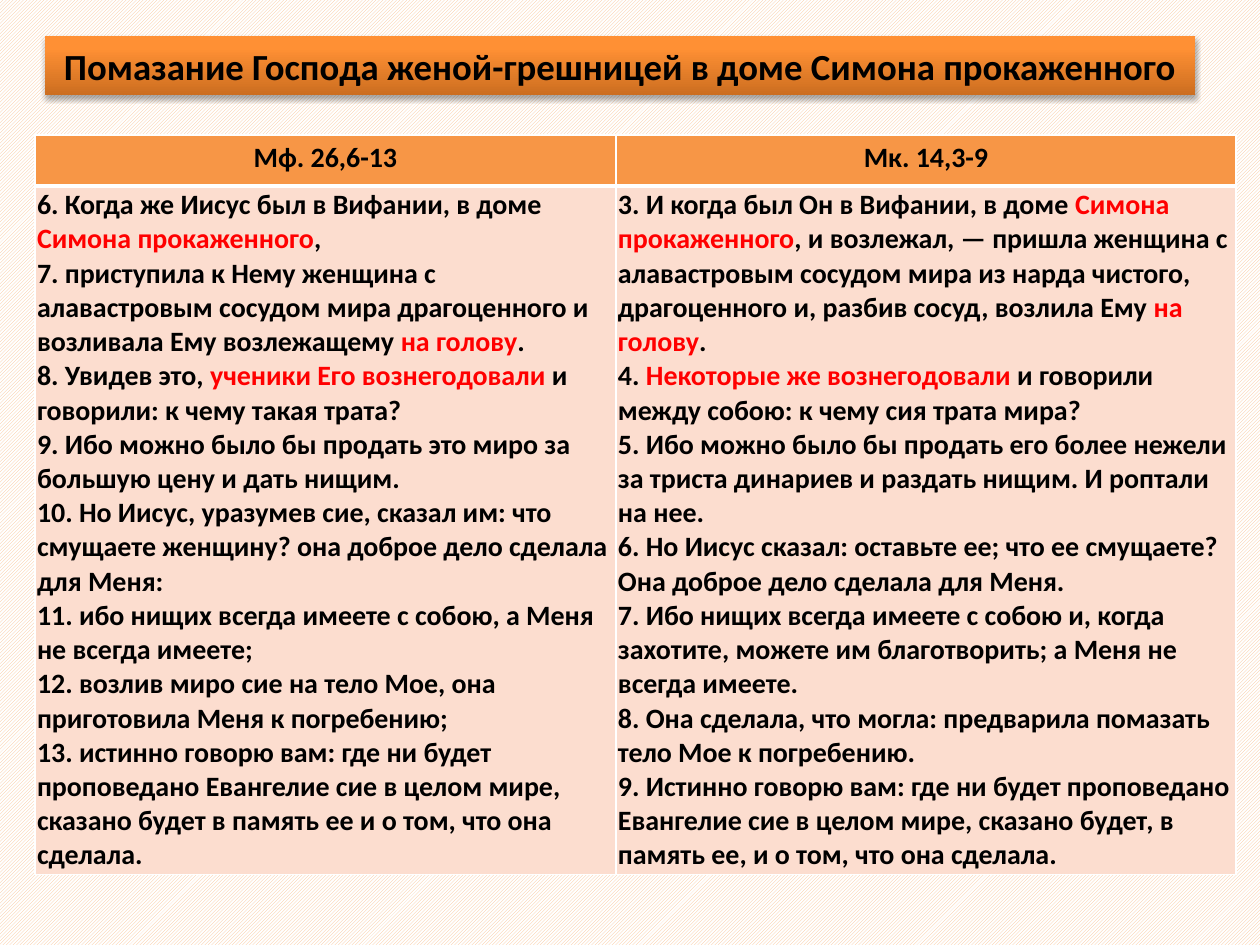
from pptx import Presentation, util as u
from pptx.dml.color import RGBColor
from pptx.enum import dml, text
from pptx.oxml import parse_xml
from pptx.oxml.ns import nsdecls

EMU_PER_PX = 914400 / 126
BLACK, WHITE, RED = "000000", "FFFFFF", "FF0000"
ORANGE, PEACH = "F79646", "FCDDCF"

# Words between asterisks are highlighted in red
HEADERS = ["Мф. 26,6-13", "Мк. 14,3-9"]
MATTHEW = [
    "6. Когда же Иисус был в Вифании, в доме *Симона прокаженного*,",
    "7. приступила к Нему женщина с алавастровым сосудом мира драгоценного и "
    "возливала Ему возлежащему *на голову*.",
    "8. Увидев это, *ученики Его вознегодовали *и говорили: к чему такая трата?",
    "9. Ибо можно было бы продать это миро за большую цену и дать нищим.",
    "10. Но Иисус, уразумев сие, сказал им: что смущаете женщину? "
    "она доброе дело сделала для Меня:",
    "11. ибо нищих всегда имеете с собою, а Меня не всегда имеете;",
    "12. возлив миро сие на тело Мое, она приготовила Меня к погребению;",
    "13. истинно говорю вам: где ни будет проповедано Евангелие сие в целом мире, "
    "сказано будет в память ее и о том, что она сделала.",
]
MARK = [
    "3. И когда был Он в Вифании, в доме *Симона прокаженного*, и возлежал, — пришла "
    "женщина с алавастровым сосудом мира из нарда чистого, драгоценного и, разбив "
    "сосуд, возлила Ему *на голову*.",
    "4. *Некоторые же вознегодовали *и говорили между собою: к чему сия трата мира?",
    "5. Ибо можно было бы продать его более нежели за триста динариев и раздать "
    "нищим. И роптали на нее.",
    "6. Но Иисус сказал: оставьте ее; что ее смущаете? Она доброе дело сделала для Меня.",
    "7. Ибо нищих всегда имеете с собою и, когда захотите, можете им благотворить; "
    "а Меня не всегда имеете.",
    "8. Она сделала, что могла: предварила помазать тело Мое к погребению.",
    "9. Истинно говорю вам: где ни будет проповедано Евангелие сие в целом мире, "
    "сказано будет, в память ее, и о том, что она сделала.",
]


def px(length):
    return u.Emu(round(length * EMU_PER_PX))


def color(hex_string):
    return RGBColor.from_string(hex_string)


class SlideBuilder:
    font = "Calibri"

    def __init__(self, slide):
        self.slide = slide

    def background(self, fore, back):
        fill = self.slide.background.fill
        fill.patterned()
        fill.pattern = dml.MSO_PATTERN.LIGHT_UPWARD_DIAGONAL
        fill.fore_color.rgb = color(fore)
        fill.back_color.rgb = color(back)

    def add_lines(self, frame, lines, size, align):
        for index, line in enumerate(lines):
            paragraph = frame.add_paragraph() if index else frame.paragraphs[0]
            paragraph.alignment = align
            for part, words in enumerate(line.split("*")):
                run = paragraph.add_run()
                run.text = words
                run.font.name, run.font.size, run.font.bold = self.font, u.Pt(size), True
                run.font.color.rgb = color(RED if part % 2 else BLACK)

    def title(self, words, left, top, width, height, stops):
        shape = self.slide.shapes.title
        shape.left, shape.top, shape.width, shape.height = map(px, (left, top, width, height))
        # Rounded outline, vertical gradient and soft shadow
        stop_xml = "".join(f'<a:gs pos="{position * 1000}"><a:srgbClr val="{shade}"/></a:gs>'
                           for position, shade in stops)
        for xml in (
            '<a:prstGeom {ns} prst="roundRect"><a:avLst/></a:prstGeom>',
            '<a:gradFill {ns} rotWithShape="1"><a:gsLst>' + stop_xml
            + '</a:gsLst><a:lin ang="16200000" scaled="0"/></a:gradFill>',
            '<a:ln {ns}><a:noFill/></a:ln>',
            '<a:effectLst {ns}><a:outerShdw blurRad="39370" dist="22860" dir="5400000" '
            'rotWithShape="0"><a:srgbClr val="000000"><a:alpha val="35000"/></a:srgbClr>'
            '</a:outerShdw></a:effectLst>',
        ):
            shape._element.spPr.append(parse_xml(xml.replace("{ns}", nsdecls("a"))))
        frame = shape.text_frame
        frame.word_wrap = True
        frame.auto_size = text.MSO_AUTO_SIZE.NONE
        frame.vertical_anchor = text.MSO_ANCHOR.MIDDLE
        self.add_lines(frame, [words], 21, text.PP_ALIGN.CENTER)

    def cell(self, cell, lines, fill, align, borders):
        properties = cell._tc.get_or_add_tcPr()
        for side, points in borders.items():
            properties.append(parse_xml(
                f'<a:ln{side} {nsdecls("a")} w="{points * 12700}"><a:solidFill>'
                f'<a:srgbClr val="{WHITE}"/></a:solidFill></a:ln{side}>'))
        cell.fill.solid()
        cell.fill.fore_color.rgb = color(fill)
        self.add_lines(cell.text_frame, lines, 16, align)

    def table(self, left, top, widths, heights, headers, bodies):
        table = self.slide.shapes.add_table(
            len(heights), len(widths), px(left), px(top),
            px(sum(widths)), px(sum(heights))).table
        for row, height in zip(table.rows, heights):
            row.height = px(height)
        for index, (width, header, body) in enumerate(zip(widths, headers, bodies)):
            table.columns[index].width = px(width)
            self.cell(table.cell(0, index), [header], ORANGE, text.PP_ALIGN.CENTER,
                      {"L": 1, "R": 1, "T": 1, "B": 3})
            verses = table.cell(1, index)
            verses.margin_left = verses.margin_right = px(2)
            verses.margin_top = verses.margin_bottom = px(2)
            self.cell(verses, body, PEACH, text.PP_ALIGN.LEFT,
                      {"L": 1, "R": 1, "T": 3, "B": 1})


def main():
    presentation = Presentation()
    presentation.slide_width, presentation.slide_height = px(1260), px(945)
    title_only = presentation.slide_layouts[5]
    builder = SlideBuilder(presentation.slides.add_slide(title_only))

    builder.background("FAC090", WHITE)
    # Heading banner
    builder.title("Помазание Господа женой-грешницей в доме Симона прокаженного",
                  45, 36, 1150, 59, [(0, "CC6E20"), (80, "FF9034"), (100, "FF9136")])
    # Parallel Gospel passages
    builder.table(35, 135, [581, 620], [51, 688], HEADERS, [MATTHEW, MARK])

    presentation.save("out.pptx")


if __name__ == "__main__":
    main()
